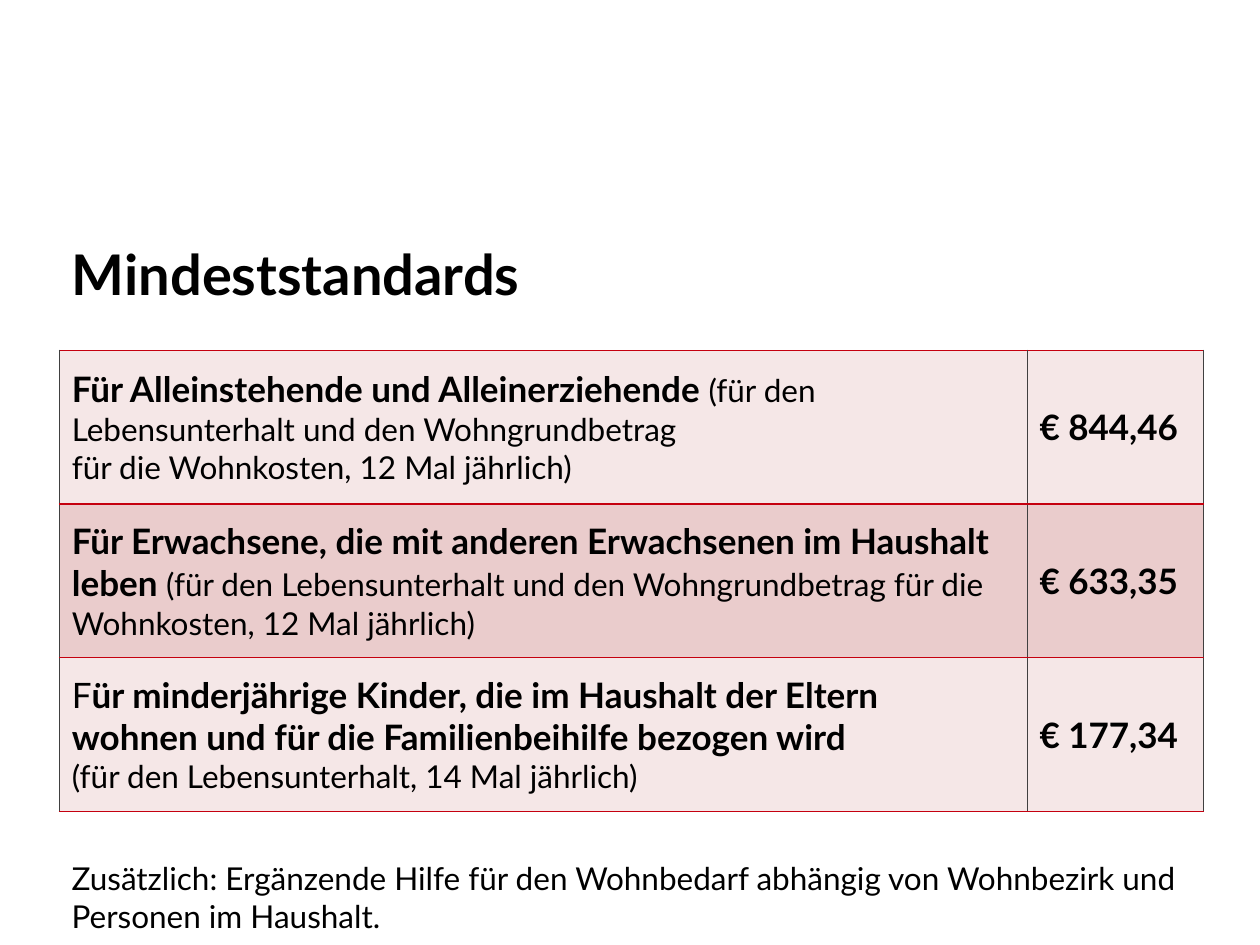
from lxml import etree
from pptx import Presentation
from pptx.dml.color import RGBColor
from pptx.enum.text import MSO_ANCHOR, MSO_AUTO_SIZE, PP_ALIGN
from pptx.oxml.ns import qn
from pptx.util import Inches, Pt

TOP, MIDDLE = MSO_ANCHOR.TOP, MSO_ANCHOR.MIDDLE
LEFT = PP_ALIGN.LEFT
GROW = MSO_AUTO_SIZE.SHAPE_TO_FIT_TEXT
TITLE_ONLY = 5

STANDARDS = [
    ([[("Für Alleinstehende und Alleinerziehende ", True, 20),
       ("(für den Lebensunterhalt und den Wohngrundbetrag", False, 18)],
      [("für die Wohnkosten, 12 Mal jährlich)", False, 18)]],
     "€ 844,46"),
    ([[("Für Erwachsene, die mit anderen Erwachsenen im Haushalt leben ", True, 20),
       ("(für den Lebensunterhalt und den Wohngrundbetrag für die "
        "Wohnkosten, 12 Mal jährlich)", False, 18)]],
     "€ 633,35"),
    ([[("F", False, 20),
       ("ür minderjährige Kinder, die im Haushalt der Eltern", True, 20)],
      [("wohnen und für die Familienbeihilfe bezogen wird", True, 20)],
      [("(für den Lebensunterhalt, 14 Mal jährlich)", False, 18)]],
     "€ 177,34"),
]


def color(value):
    """Turn a hex string into a colour."""
    return RGBColor.from_string(value)


def add_text(para, text, size=18, bold=False, font="Lato", ink="000000"):
    """Append a formatted span to a paragraph."""
    span = para.add_run()
    span.text = text
    span.font.name = font
    span.font.size = Pt(size)
    span.font.bold = bold
    span.font.color.rgb = color(ink)


class SlideBuilder:
    """Hold the style and the current slide."""

    rule = "C5000F"
    divider = "404040"
    bands = ("F5E7E7", "EACCCC")

    def __init__(self, page):
        """Keep the slide to build on."""
        self.page = page

    def title(self, text, left, top, width, height):
        """Place and fill the title placeholder."""
        box = self.page.shapes.title
        box.left, box.top, box.width, box.height = left, top, width, height
        frame = box.text_frame
        frame.vertical_anchor = TOP
        para = frame.paragraphs[0]
        para.alignment = LEFT
        add_text(para, text, size=32, bold=True)

    def note(self, text, left, top, width, height):
        """Add a wrapped text box."""
        frame = self.page.shapes.add_textbox(left, top, width, height).text_frame
        frame.word_wrap = True
        frame.auto_size = GROW
        add_text(frame.paragraphs[0], text)

    def borders(self, cell):
        """Draw red rules above and below a cell and thin dividers beside it."""
        properties = cell._tc.get_or_add_tcPr()
        edges = (("L", self.divider, 0.5), ("R", self.divider, 0.5),
                 ("T", self.rule, 1), ("B", self.rule, 1))
        for index, (side, value, width) in enumerate(edges):
            line = etree.Element(qn(f"a:ln{side}"), w=str(Pt(width)))
            fill = etree.SubElement(line, qn("a:solidFill"))
            etree.SubElement(fill, qn("a:srgbClr"), val=value)
            properties.insert(index, line)

    def cell(self, cell, paragraphs, band):
        """Fill a table cell with paragraphs of spans."""
        cell.fill.solid()
        cell.fill.fore_color.rgb = color(band)
        cell.vertical_anchor = MIDDLE
        self.borders(cell)
        frame = cell.text_frame
        for index, spans in enumerate(paragraphs):
            para = frame.add_paragraph() if index else frame.paragraphs[0]
            for text, bold, size in spans:
                add_text(para, text, size=size, bold=bold)

    def table(self, rows, widths, left, top, height):
        """Add a banded table of descriptions and amounts."""
        table = self.page.shapes.add_table(
            len(rows), len(widths), left, top, sum(widths), height).table
        table.first_row = False
        for column, width in zip(table.columns, widths):
            column.width = width
        for index, (description, amount) in enumerate(rows):
            band = self.bands[index % len(self.bands)]
            self.cell(table.cell(index, 0), description, band)
            self.cell(table.cell(index, 1), [[(amount, True, 20)]], band)


def main():
    """Build and save the deck."""
    deck = Presentation()
    deck.slide_width, deck.slide_height = Inches(10), Inches(7.5)
    builder = SlideBuilder(deck.slides.add_slide(deck.slide_layouts[TITLE_ONLY]))
    left = Inches(0.47)
    builder.title("Mindeststandards", left, Inches(1.85), Inches(9.21), Inches(1.06))
    builder.table(STANDARDS, [Inches(7.68), Inches(1.4)],
                  left, Inches(2.78), Inches(3.66))
    builder.note("Zusätzlich: Ergänzende Hilfe für den Wohnbedarf abhängig von "
                 "Wohnbezirk und Personen im Haushalt.",
                 left, Inches(6.77), Inches(9.08), Inches(0.71))
    deck.save("out.pptx")


if __name__ == "__main__":
    main()
